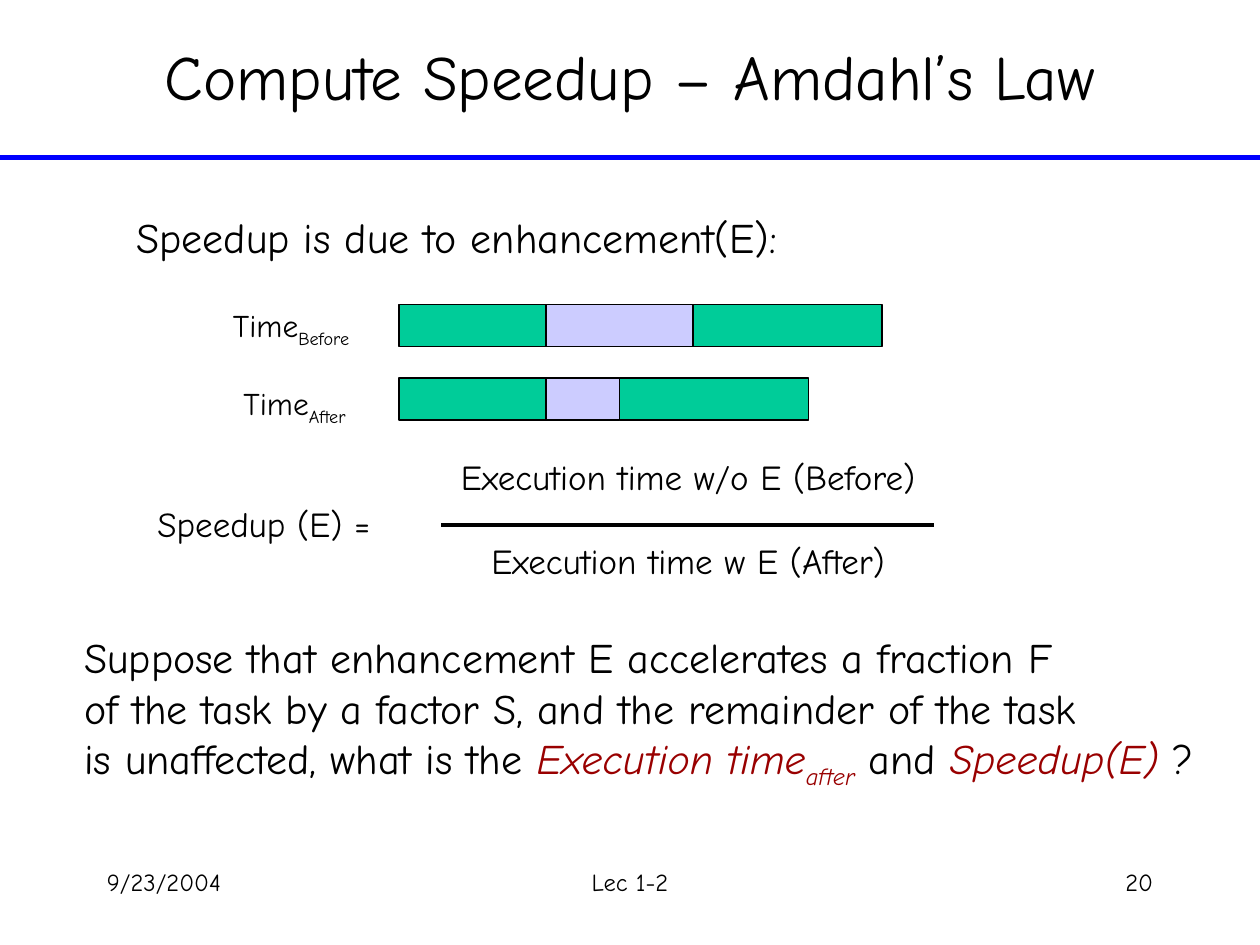
from dataclasses import dataclass
from typing import NamedTuple

import pptx
import pptx.dml.color
import pptx.enum.shapes
import pptx.enum.text
import pptx.oxml.ns
import pptx.util
from lxml import etree

ALIGN = pptx.enum.text.PP_ALIGN
ANCHOR = pptx.enum.text.MSO_ANCHOR
CELL = pptx.util.Inches(1) / 12  # the slide is a grid of 120 columns and 90 rows


@dataclass(frozen=True)
class Theme:
    font: str = "Comic Neue"
    ink: str = "000000"
    rule: str = "0000FF"
    unaffected: str = "00CC99"
    enhanced: str = "CCCCFF"
    accent: str = "990000"
    title: int = 36
    body: int = 24
    formula: int = 20
    label: int = 18
    footer: int = 14


THEME = Theme()


class Box(NamedTuple):
    column: float
    row: float
    columns: float
    rows: float


class Part(NamedTuple):
    """A stretch of text with its own emphasis."""
    text: str
    accent: bool = False
    subscript: bool = False


class Bar(NamedTuple):
    """A run time, split into plain, enhanced and plain segments."""
    label: str
    label_box: Box
    row: float
    segments: tuple[float, ...]


def cells(count: float) -> int:
    return round(count * CELL)


def color(value: str) -> pptx.dml.color.RGBColor:
    return pptx.dml.color.RGBColor.from_string(value)


def add_text(slide, box: Box, *lines: str | list[Part], size: int,
             align=ALIGN.LEFT, anchor=ANCHOR.TOP, gap: float = 0) -> None:
    """Add one paragraph per line, with gap points between them."""
    shape = slide.shapes.add_textbox(*map(cells, box))
    frame = shape.text_frame
    frame.word_wrap = True
    frame.vertical_anchor = anchor
    for index, line in enumerate(lines):
        paragraph = frame.add_paragraph() if index else frame.paragraphs[0]
        paragraph.alignment = align
        paragraph.space_before = pptx.util.Pt(gap if index else 0)
        for part in [Part(line)] if isinstance(line, str) else line:
            run = paragraph.add_run()
            run.text = part.text
            run.font.name = THEME.font
            run.font.size = pptx.util.Pt(size)
            run.font.italic = part.accent
            run.font.color.rgb = color(THEME.accent if part.accent else THEME.ink)
            if part.subscript:
                run._r.get_or_add_rPr().set("baseline", "-25000")


def add_rule(slide, start: float, end: float, row: float, line_color: str, width: float) -> None:
    connector = slide.shapes.add_connector(
        pptx.enum.shapes.MSO_CONNECTOR.STRAIGHT,
        cells(start), cells(row), cells(end), cells(row))
    connector.line.color.rgb = color(line_color)
    connector.line.width = pptx.util.Pt(width)
    etree.SubElement(connector._element.spPr, pptx.oxml.ns.qn("a:effectLst"))


def add_bar(slide, bar: Bar) -> None:
    add_text(slide, bar.label_box, [Part("Time"), Part(bar.label, subscript=True)],
             size=THEME.label)
    column = 38
    fills = (THEME.unaffected, THEME.enhanced, THEME.unaffected)
    for columns, fill in zip(bar.segments, fills):
        segment = slide.shapes.add_shape(
            pptx.enum.shapes.MSO_SHAPE.RECTANGLE,
            *map(cells, Box(column, bar.row, columns, 4)))
        segment.shadow.inherit = False
        segment.fill.solid()
        segment.fill.fore_color.rgb = color(fill)
        segment.line.color.rgb = color(THEME.ink)
        segment.line.width = pptx.util.Pt(0.75)
        column += columns


BARS = (
    Bar("Before", Box(21, 28.6, 15.7, 4.8), 29, (14, 14, 18)),
    Bar("After", Box(22, 36, 14.8, 4.8), 36, (14, 7, 18)),
)
FOOTERS = (
    ("9/23/2004", Box(9, 82, 25, 6), ALIGN.LEFT),
    ("Lec 1-2", Box(41, 82, 38, 6), ALIGN.CENTER),
    ("20", Box(86, 82, 25, 6), ALIGN.RIGHT),
)
QUESTION = (
    "Suppose that enhancement E accelerates a fraction F",
    "of the task by a factor S, and the remainder of the task",
    [
        Part("is unaffected, what is the "),
        Part("Execution time", accent=True),
        Part("after", accent=True, subscript=True),
        Part(" and "),
        Part("Speedup(E) ", accent=True),
        Part("?"),
    ],
)


def main() -> None:
    presentation = pptx.Presentation()
    presentation.slide_width = cells(120)
    presentation.slide_height = cells(90)
    slide = presentation.slides.add_slide(presentation.slide_layouts[6])

    add_rule(slide, 0, 120, 15, THEME.rule, 3)
    add_text(slide, Box(9, 2, 102, 10.4), "Compute Speedup – Amdahl’s Law",
             size=THEME.title, align=ALIGN.CENTER, anchor=ANCHOR.MIDDLE)
    add_text(slide, Box(11.8, 19.6, 67.6, 6), "Speedup is due to enhancement(E):",
             size=THEME.body)
    for bar in BARS:
        add_bar(slide, bar)

    add_text(slide, Box(13.8, 47.3, 23.9, 5.2), "Speedup (E) =", size=THEME.formula)
    add_text(slide, Box(40.7, 42.8, 49.7, 13.2),
             "Execution time w/o E (Before)", "Execution time w E (After)",
             size=THEME.formula, align=ALIGN.CENTER, gap=24)
    add_rule(slide, 42, 89, 50, THEME.ink, 2.25)

    add_text(slide, Box(6.84, 59.6, 108.1, 20.4), *QUESTION, size=THEME.body)
    for text, box, align in FOOTERS:
        add_text(slide, box, text, size=THEME.footer, align=align)

    presentation.save("out.pptx")


if __name__ == "__main__":
    main()
